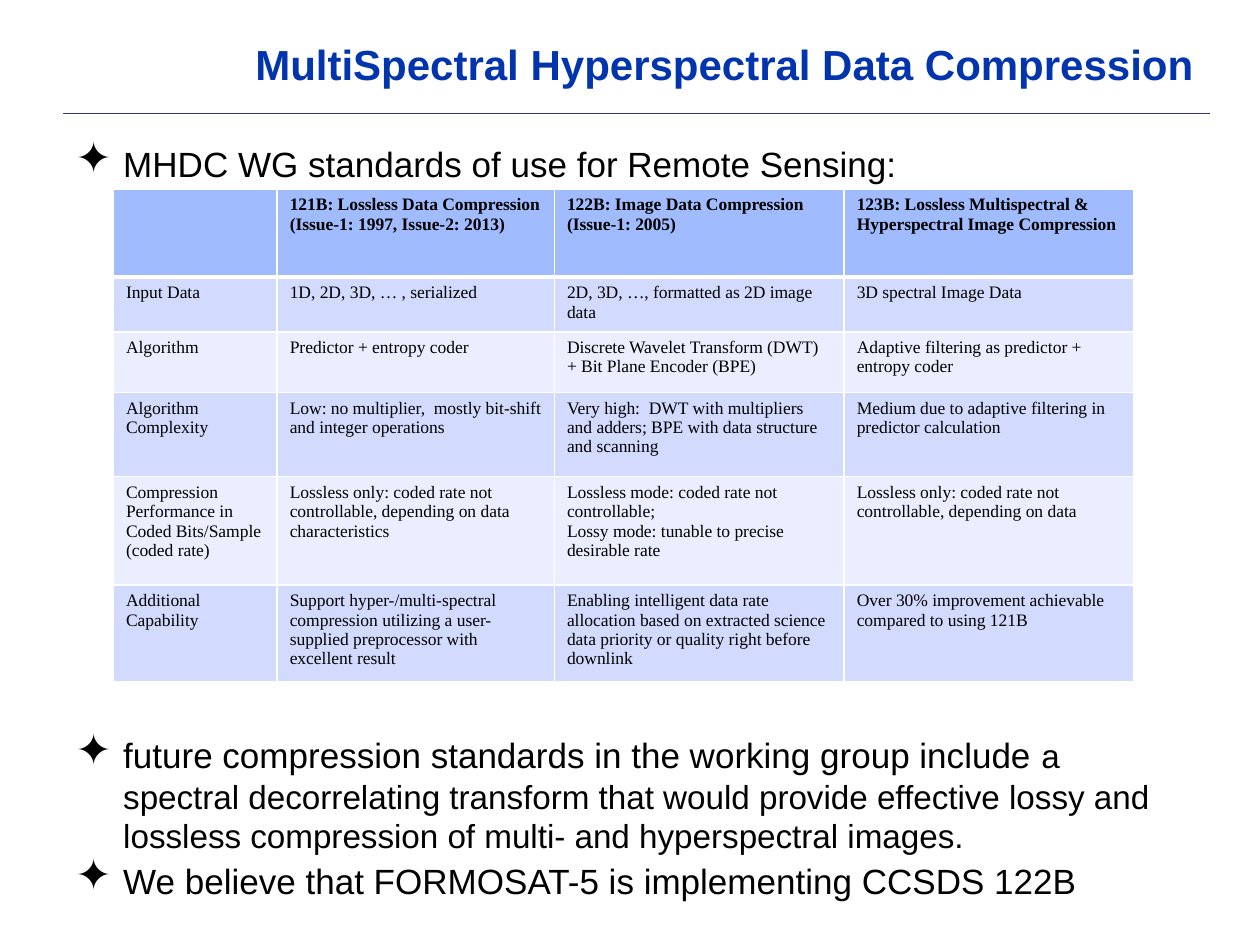
from dataclasses import dataclass

from pptx import Presentation
from pptx.dml.color import RGBColor as Color
from pptx.enum.shapes import MSO_CONNECTOR as Connector
from pptx.enum.text import MSO_ANCHOR as Anchor, PP_ALIGN as Align
from pptx.oxml import parse_xml
from pptx.oxml.ns import nsdecls
from pptx.util import Inches, Pt


@dataclass(frozen=True)
class Theme:
    heading_font: str = "Arial"
    table_font: str = "Times New Roman"
    title_color: str = "0234AD"
    text_color: str = "000000"
    rule_color: str = "333399"
    border_color: str = "FFFFFF"
    header_fill: str = "A0BCFE"
    band_fills: tuple = ("D2DBFE", "EAEEFF")
    title_size: float = 24
    bullet_size: float = 20
    detail_size: float = 19
    table_size: float = 10


def add_text(paragraph, text, font, size, color, bold=False):
    run = paragraph.add_run()
    run.text = text
    run.font.name = font
    run.font.size = Pt(size)
    run.font.bold = bold
    run.font.color.rgb = Color.from_string(color)


def add_element(parent, xml):
    parent.append(parse_xml(xml.replace(" ", f" {nsdecls('a')} ", 1)))


class SlideBuilder:
    def __init__(self, presentation, theme):
        self.theme = theme
        self.width = presentation.slide_width
        self.height = presentation.slide_height
        self.slide = presentation.slides.add_slide(presentation.slide_layouts[6])

    def place(self, left, top, width, height):
        return (int(left * self.width), int(top * self.height),
                int(width * self.width), int(height * self.height))

    def rule(self, left, right, top):
        x, y, end, _ = self.place(left, top, right, 0)
        line = self.slide.shapes.add_connector(Connector.STRAIGHT, x, y, end, y)
        line.line.color.rgb = Color.from_string(self.theme.rule_color)
        line.line.width = Pt(0.13)
        add_element(line._element.spPr, "<a:effectLst />")

    def frame(self, *area):
        frame = self.slide.shapes.add_textbox(*self.place(*area)).text_frame
        frame.word_wrap = True
        frame.vertical_anchor = Anchor.TOP
        return frame

    def title(self, text, *area):
        paragraph = self.frame(*area).paragraphs[0]
        paragraph.alignment = Align.CENTER
        paragraph.line_spacing = 0.9
        add_text(paragraph, text, font=self.theme.heading_font,
                 size=self.theme.title_size, color=self.theme.title_color, bold=True)

    def bullets(self, items, *area):
        frame = self.frame(*area)
        for index, runs in enumerate(items):
            paragraph = frame.add_paragraph() if index else frame.paragraphs[0]
            paragraph.space_after = Pt(2)
            properties = paragraph._p.get_or_add_pPr()
            properties.set("marL", str(Inches(0.38)))
            properties.set("indent", str(-Inches(0.38)))
            add_element(properties, '<a:buSzPct val="125000"/>')
            add_element(properties, '<a:buChar char="✦"/>')
            for text, size in runs:
                add_text(paragraph, text, font=self.theme.heading_font,
                         size=size, color=self.theme.text_color)

    def cell(self, cell, text, row):
        theme = self.theme
        header = row == 0
        properties = cell._tc.get_or_add_tcPr()
        widths = {"L": 1, "R": 1, "T": 3 if row == 1 else 1, "B": 3 if header else 1}
        for side, width in widths.items():
            add_element(properties, f'<a:ln{side} w="{Pt(width)}"><a:solidFill>'
                        f'<a:srgbClr val="{theme.border_color}"/></a:solidFill></a:ln{side}>')
        cell.fill.solid()
        fill = theme.header_fill if header else theme.band_fills[(row - 1) % 2]
        cell.fill.fore_color.rgb = Color.from_string(fill)
        frame = cell.text_frame
        for index, line in enumerate(text.split("\n")):
            paragraph = frame.add_paragraph() if index else frame.paragraphs[0]
            add_text(paragraph, line, font=theme.table_font, size=theme.table_size,
                     color=theme.text_color, bold=header)

    def table(self, rows, left, top, column_shares, row_shares):
        area = self.place(left, top, sum(column_shares), sum(row_shares))
        table = self.slide.shapes.add_table(len(rows), len(rows[0]), *area).table
        for column, share in zip(table.columns, column_shares):
            column.width = int(share * self.width)
        for row, share in zip(table.rows, row_shares):
            row.height = int(share * self.height)
        for row, texts in enumerate(rows):
            for column, text in enumerate(texts):
                self.cell(table.cell(row, column), text, row)


STANDARDS = [
    ["", "121B: Lossless Data Compression\n(Issue-1: 1997, Issue-2: 2013)",
     "122B: Image Data Compression\n(Issue-1: 2005)",
     "123B: Lossless Multispectral & Hyperspectral Image Compression"],
    ["Input Data", "1D, 2D, 3D, … , serialized",
     "2D, 3D, …, formatted as 2D image data", "3D spectral Image Data"],
    ["Algorithm", "Predictor + entropy coder",
     "Discrete Wavelet Transform (DWT) + Bit Plane Encoder (BPE)",
     "Adaptive filtering as predictor + entropy coder"],
    ["Algorithm Complexity",
     "Low: no multiplier,  mostly bit-shift and integer operations",
     "Very high:  DWT with multipliers and adders; BPE with data structure and scanning",
     "Medium due to adaptive filtering in predictor calculation"],
    ["Compression Performance in Coded Bits/Sample (coded rate)",
     "Lossless only: coded rate not controllable, depending on data characteristics",
     "Lossless mode: coded rate not controllable;\n"
     "Lossy mode: tunable to precise desirable rate",
     "Lossless only: coded rate not controllable, depending on data"],
    ["Additional Capability",
     "Support hyper-/multi-spectral compression utilizing a user-supplied "
     "preprocessor with excellent result",
     "Enabling intelligent data rate allocation based on extracted science "
     "data priority or quality right before downlink",
     "Over 30% improvement achievable compared to using 121B"],
]


def main():
    presentation = Presentation()
    presentation.slide_width = Inches(10)
    presentation.slide_height = Inches(7.5)
    theme = Theme()
    builder = SlideBuilder(presentation, theme)
    builder.rule(0.05, 0.96, 0.12)
    builder.title("MultiSpectral Hyperspectral Data Compression",
                  0.19, 0.04, 0.77, 0.08)
    builder.bullets([[("MHDC WG standards of use for Remote Sensing:",
                       theme.bullet_size)]], 0.05, 1.08 / 7.5, 0.9, 0.06)
    builder.table(STANDARDS, 0.09, 0.2, (0.13, 0.22, 0.23, 0.23),
                  [inches / 7.5 for inches in (0.7, 0.41, 0.48, 0.67, 0.86, 0.71)])
    builder.bullets([
        [("future compression standards in the working group include ", theme.bullet_size),
         ("a spectral decorrelating transform that would provide effective lossy and "
          "lossless compression of multi- and hyperspectral images.", theme.detail_size)],
        [("We believe that FORMOSAT-5 is implementing CCSDS 122B", theme.bullet_size)],
    ], 0.05, 0.77, 0.9, 0.19)
    presentation.save("out.pptx")


if __name__ == "__main__":
    main()
